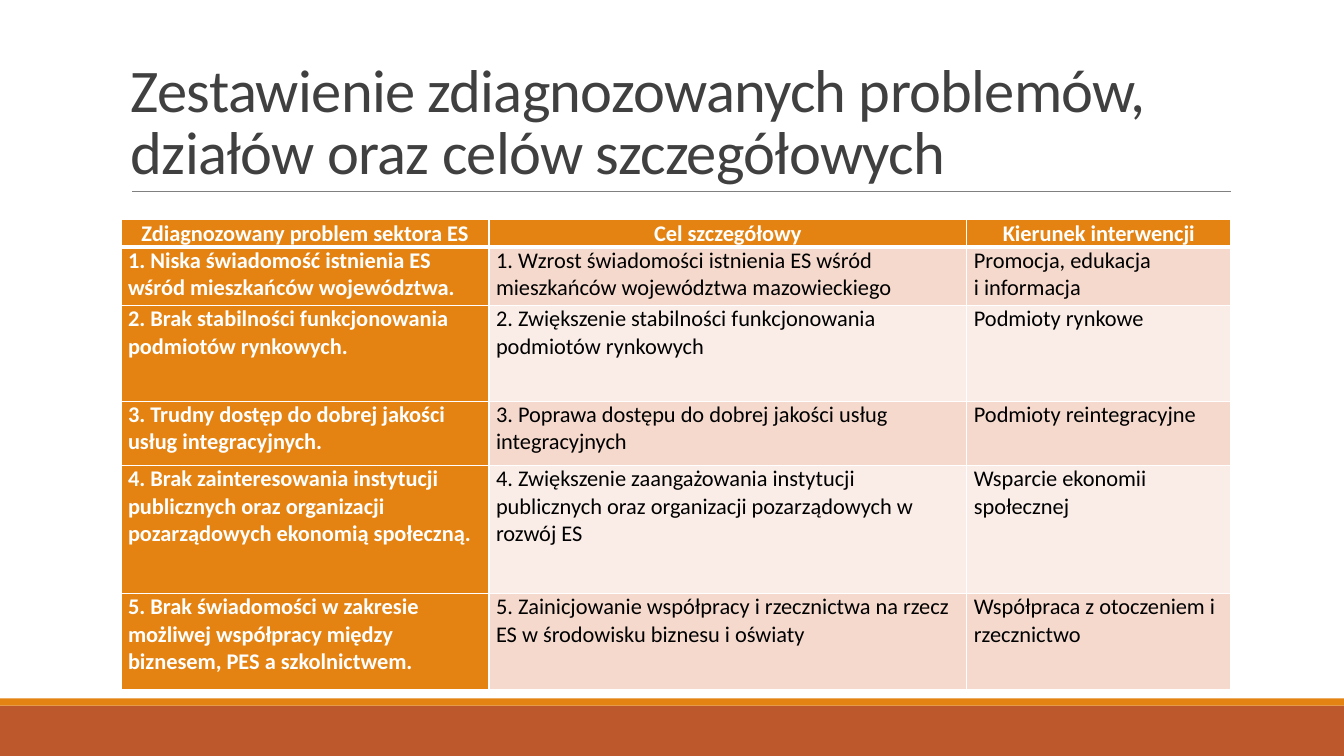
from lxml.etree import SubElement
from pptx import Presentation
from pptx.dml.color import RGBColor
from pptx.enum.shapes import MSO_CONNECTOR, MSO_SHAPE
from pptx.enum.text import MSO_ANCHOR, PP_ALIGN
from pptx.oxml.ns import qn
from pptx.util import Inches, Pt

COLORS = {
    "orange": "E48312",
    "rust": "BD582C",
    "rule": "808080",
    "title": "404040",
    "white": "FFFFFF",
    "black": "000000",
    "band_dark": "F5D9CC",
    "band_light": "FAEDE7",
}
TITLE = "Zestawienie zdiagnozowanych problemów, działów oraz celów szczegółowych"
ROWS = [
    ("Zdiagnozowany problem sektora ES", "Cel szczegółowy", "Kierunek interwencji"),
    ("1. Niska świadomość istnienia ES wśród mieszkańców województwa.",
     "1. Wzrost świadomości istnienia ES wśród mieszkańców województwa mazowieckiego",
     "Promocja, edukacja \ni informacja"),
    ("2. Brak stabilności funkcjonowania podmiotów rynkowych.",
     "2. Zwiększenie stabilności funkcjonowania podmiotów rynkowych",
     "Podmioty rynkowe"),
    ("3. Trudny dostęp do dobrej jakości usług integracyjnych.",
     "3. Poprawa dostępu do dobrej jakości usług integracyjnych",
     "Podmioty reintegracyjne"),
    ("4. Brak zainteresowania instytucji publicznych oraz organizacji "
     "pozarządowych ekonomią społeczną.",
     "4. Zwiększenie zaangażowania instytucji publicznych oraz organizacji "
     "pozarządowych w rozwój ES",
     "Wsparcie ekonomii społecznej"),
    ("5. Brak świadomości w zakresie możliwej współpracy między biznesem, "
     "PES a szkolnictwem.",
     "5. Zainicjowanie współpracy i rzecznictwa na rzecz ES w środowisku "
     "biznesu i oświaty",
     "Współpraca z otoczeniem i rzecznictwo"),
]
COLUMN_WIDTHS = [3.65, 4.74, 2.62]
ROW_HEIGHTS = [0.27, 0.58, 0.95, 0.64, 1.27, 0.95]


def rgb(name):
    """Return the named colour."""
    return RGBColor.from_string(COLORS[name])


def write_text(frame, text, size=16, color="black", bold=False,
               align=PP_ALIGN.LEFT, line_spacing=1.0, tracking=None):
    """Write one formatted paragraph into a text frame."""
    para = frame.paragraphs[0]
    para.text = text
    para.alignment = align
    para.line_spacing = line_spacing
    for span in para.runs:
        span.font.name = "Calibri"
        span.font.size = Pt(size)
        span.font.bold = bold
        span.font.color.rgb = rgb(color)
        if tracking is not None:
            span.font._element.set("spc", str(round(tracking * 100)))
    for line_break in para._p.findall(qn("a:br")):
        SubElement(line_break, qn("a:rPr"), sz=str(round(size * 100)))


def add_bar(page, top, height, color):
    """Add a full-width footer bar."""
    bar = page.shapes.add_shape(MSO_SHAPE.RECTANGLE, 0, Inches(top),
                                Inches(13.33), Inches(height))
    bar.shadow.inherit = False
    bar.fill.solid()
    bar.fill.fore_color.rgb = rgb(color)
    bar.line.fill.background()


def add_rule(page, left, right, top):
    """Add the thin horizontal line under the title."""
    rule = page.shapes.add_connector(MSO_CONNECTOR.STRAIGHT, Inches(left),
                                     Inches(top), Inches(right), Inches(top))
    rule.line.color.rgb = rgb("rule")
    rule.line.width = Pt(0.5)
    SubElement(rule._element.spPr, qn("a:effectLst"))


def add_title(page, text):
    """Add the slide title, anchored to the bottom of its box."""
    box = page.shapes.add_textbox(Inches(1.2), Inches(0.31), Inches(11), Inches(1.59))
    frame = box.text_frame
    frame.word_wrap = True
    frame.vertical_anchor = MSO_ANCHOR.BOTTOM
    write_text(frame, text, size=43.2, color="title", line_spacing=0.85, tracking=-0.5)


def style_cell(cell, fill, bottom_width):
    """Set the margins, white borders and fill of a table cell."""
    cell.margin_left = cell.margin_right = Inches(0.07)
    cell.margin_top = cell.margin_bottom = 0
    properties = cell._tc.get_or_add_tcPr()
    for side, width in (("L", 1), ("R", 1), ("T", 1), ("B", bottom_width)):
        border = SubElement(properties, qn(f"a:ln{side}"), w=str(Pt(width)))
        border_fill = SubElement(border, qn("a:solidFill"))
        SubElement(border_fill, qn("a:srgbClr"), val=COLORS["white"])
    cell.fill.solid()
    cell.fill.fore_color.rgb = rgb(fill)


def add_problem_table(page):
    """Add the table of problems, goals and directions."""
    table = page.shapes.add_table(
        len(ROWS), len(COLUMN_WIDTHS), Inches(1.2), Inches(2.18),
        Inches(sum(COLUMN_WIDTHS)), Inches(sum(ROW_HEIGHTS))).table
    table.first_col = True
    for column, width in zip(table.columns, COLUMN_WIDTHS):
        column.width = Inches(width)
    for row_index, (row, height) in enumerate(zip(table.rows, ROW_HEIGHTS)):
        row.height = Inches(height)
        is_header = row_index == 0
        band = "band_dark" if row_index % 2 else "band_light"
        for column_index, cell in enumerate(row.cells):
            is_accent = is_header or column_index == 0
            style_cell(cell, "orange" if is_accent else band, 3 if is_header else 1)
            write_text(cell.text_frame, ROWS[row_index][column_index],
                       color="white" if is_accent else "black", bold=is_accent,
                       align=PP_ALIGN.CENTER if is_header else PP_ALIGN.LEFT)


def main():
    """Build and save the deck."""
    deck = Presentation()
    deck.slide_width, deck.slide_height = Inches(13.33), Inches(7.5)
    page = deck.slides.add_slide(deck.slide_layouts[6])
    add_bar(page, 7, 0.5, "rust")
    add_bar(page, 6.93, 0.07, "orange")
    add_rule(page, 1.31, 12.21, 1.9)
    add_title(page, TITLE)
    add_problem_table(page)
    deck.save("out.pptx")


if __name__ == "__main__":
    main()
